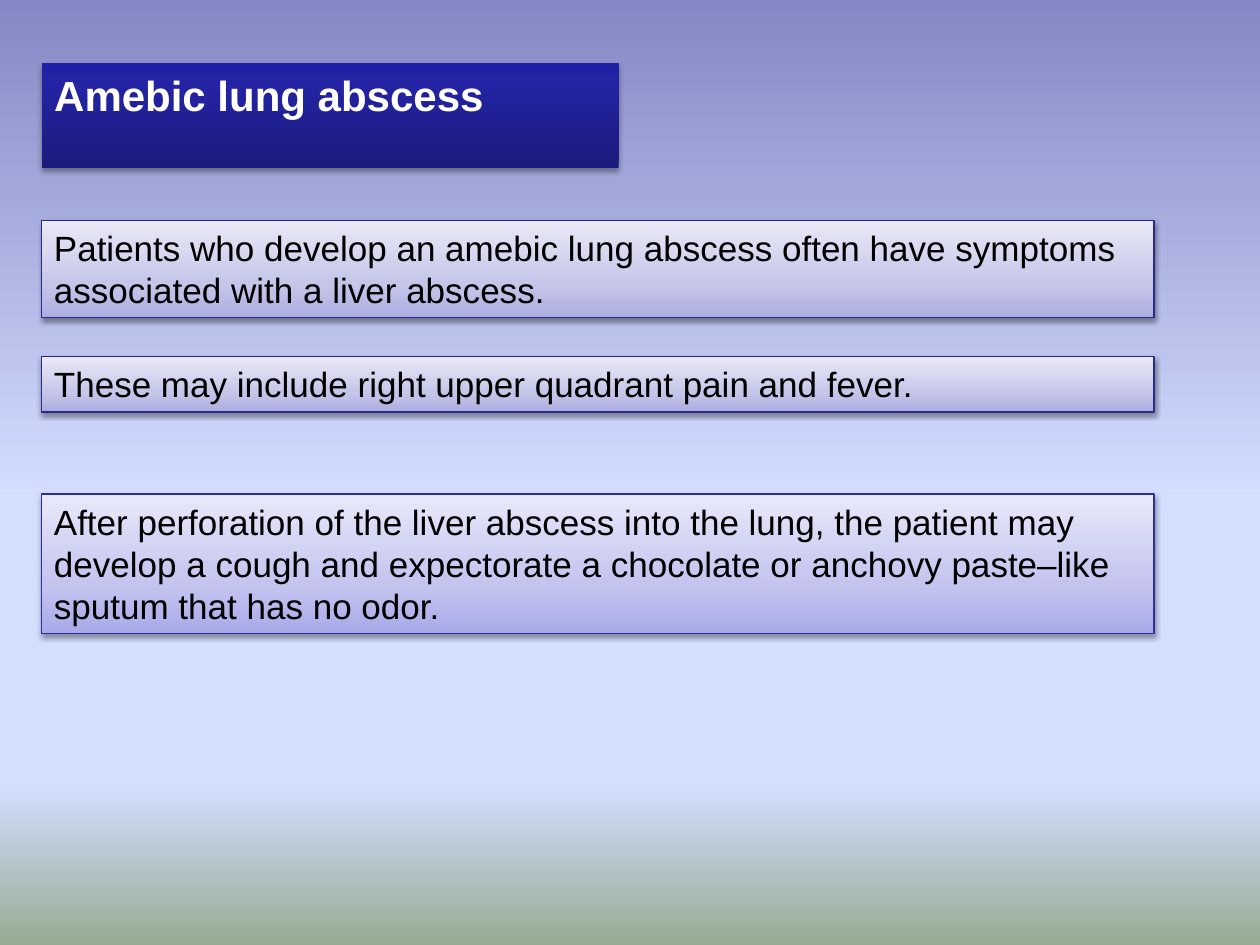
import pptx
import pptx.dml.color
import pptx.enum.shapes
import pptx.enum.text
import pptx.oxml
import pptx.oxml.ns
import pptx.util
from pptx.util import Inches

RGB = pptx.dml.color.RGBColor
WHITE = RGB(0xFF, 0xFF, 0xFF)
BLACK = RGB(0, 0, 0)
NAVY = RGB(0x2A, 0x2A, 0x89)
BLUE = RGB(0x2F, 0x2F, 0x98)


def stops(*pairs):
    return [(place, RGB.from_string(code)) for place, code in pairs]


SKY = stops((0, "8488C4"), (53, "D4DEFF"), (83, "D4DEFF"), (100, "96AB94"))
DARK = stops((0, "1B1B7E"), (80, "2323A3"), (100, "2020A6"))
SOFT = stops((0, "ADADE1"), (35, "C6C6E9"), (100, "E9E9F7"))
VIVID = stops((0, "A9A9E9"), (35, "C4C4EF"), (100, "E8E8FA"))

LEFT, WIDTH = Inches(0.33), Inches(8.83)
NOTES = [
    (1.75, 0.77, SOFT, NAVY,
     "Patients who develop an amebic lung abscess often have symptoms "
     "associated with a liver abscess."),
    (2.83, 0.44, SOFT, NAVY,
     "These may include right upper quadrant pain and fever."),
    (3.92, 1.11, VIVID, BLUE,
     "After perforation of the liver abscess into the lung, the patient may "
     "develop a cough and expectorate a chocolate or anchovy paste–like "
     "sputum that has no odor."),
]


def apply(target, values):
    for name, value in values.items():
        setattr(target, name, value)


def make(tag, parent, **attrs):
    child = pptx.oxml.parse_xml(f"<{tag} {pptx.oxml.ns.nsdecls('a')}/>")
    for name, value in attrs.items():
        child.set(name, str(value))
    parent.append(child)
    return child


def blend(fill, root, shades, angle):
    """Fill with a linear gradient; the angle runs counter-clockwise."""
    fill.gradient()
    fill.gradient_angle = angle
    ramp = next(root.iter(pptx.oxml.ns.qn("a:gsLst")))
    for old in list(ramp):
        ramp.remove(old)
    for place, color in shades:
        stop = make("a:gs", ramp, pos=place * 1000)
        make("a:srgbClr", stop, val=color)


def shade(shape, drop, alpha):
    """Cast a soft shadow straight down."""
    shape.shadow.inherit = False
    effects = next(shape.element.iter(pptx.oxml.ns.qn("a:effectLst")))
    cast = make("a:outerShdw", effects, blurRad=pptx.util.Pt(3.1),
                dist=pptx.util.Pt(drop), dir=90 * 60000, rotWithShape=0)
    color = make("a:srgbClr", cast, val=BLACK)
    make("a:alpha", color, val=alpha * 1000)


def write(shape, text, font):
    frame = shape.text_frame
    frame.text = text
    apply(frame, {
        "word_wrap": True,
        "auto_size": pptx.enum.text.MSO_AUTO_SIZE.SHAPE_TO_FIT_TEXT,
        "vertical_anchor": pptx.enum.text.MSO_ANCHOR.TOP,
    })
    para = frame.paragraphs[0]
    para.alignment = pptx.enum.text.PP_ALIGN.LEFT
    run = para.runs[0]
    apply(run.font, {"name": "Arial", "size": pptx.util.Pt(font["size"]),
                     "bold": font["bold"]})
    run.font.color.rgb = font["color"]


def head(slide, box, text):
    title = slide.shapes.title
    apply(title, dict(zip(("left", "top", "width", "height"), box)))
    blend(title.fill, title.element, DARK, 90)
    title.line.fill.background()
    shade(title, 1.8, 35)
    write(title, text, {"size": 24, "bold": True, "color": WHITE})


def note(slide, box, text, shades, edge):
    panel = slide.shapes.add_shape(
        pptx.enum.shapes.MSO_SHAPE.RECTANGLE, *box)
    blend(panel.fill, panel.element, shades, 90)
    panel.line.color.rgb = edge
    panel.line.width = pptx.util.Pt(0.75)
    shade(panel, 1.6, 38)
    write(panel, text, {"size": 20, "bold": False, "color": BLACK})


def main():
    deck = pptx.Presentation()
    apply(deck, {"slide_width": Inches(10), "slide_height": Inches(7.5)})
    slide = deck.slides.add_slide(deck.slide_layouts.get_by_name("Title Only"))
    blend(slide.background.fill, slide.element, SKY, 270)
    head(slide, (LEFT, Inches(0.5), Inches(4.58), Inches(0.5)),
         "Amebic lung abscess")
    for top, height, shades, edge, text in NOTES:
        box = (LEFT, Inches(top), WIDTH, Inches(height))
        note(slide, box, text, shades, edge)
    deck.save("out.pptx")


if __name__ == "__main__":
    main()
